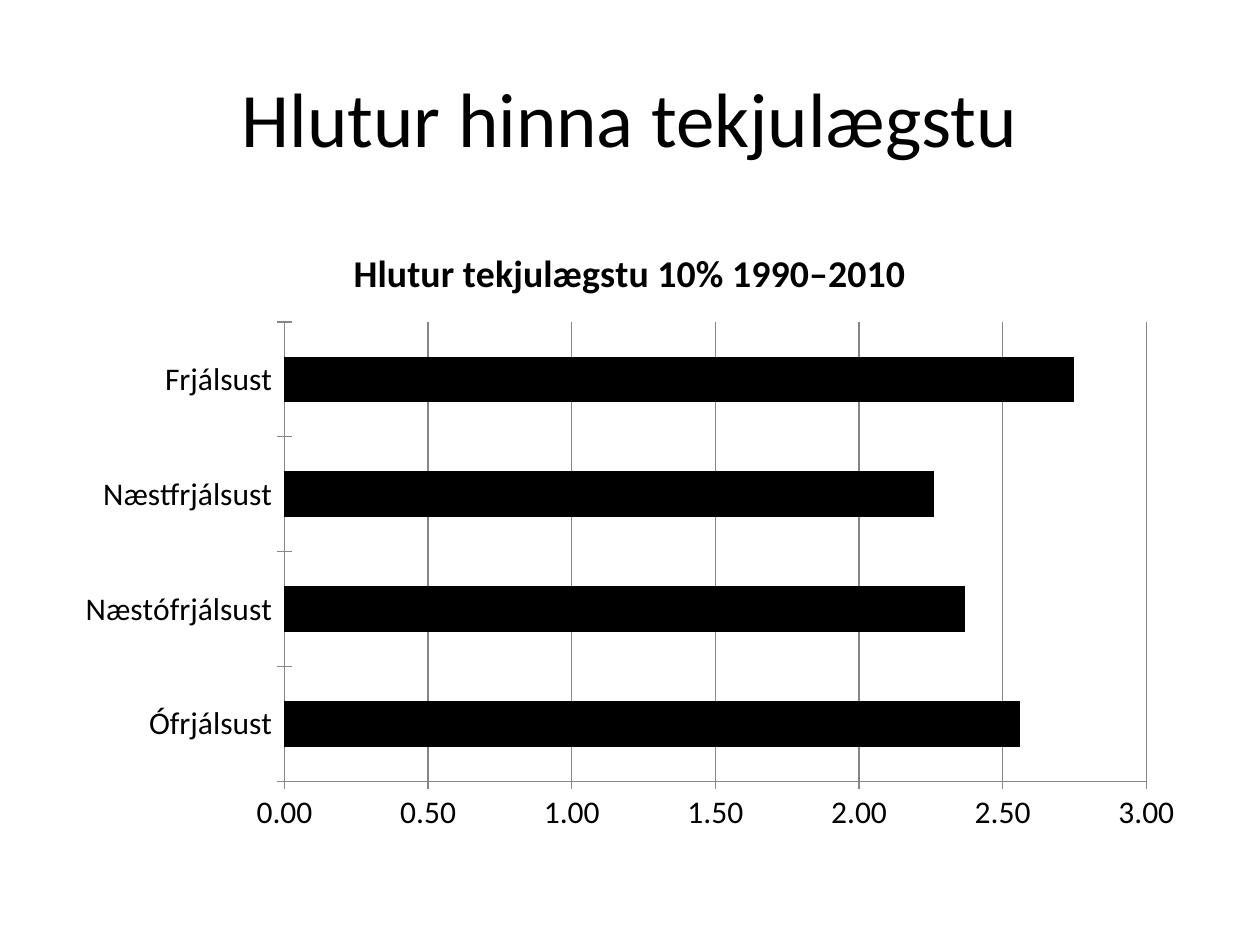
from dataclasses import dataclass

from pptx import Presentation
from pptx import util as u
from pptx.chart.data import CategoryChartData
from pptx.dml.color import RGBColor
from pptx.enum import chart as charts
from pptx.enum import text

FONT = "Calibri"
COLORS = {"background": "FFFFFF", "ink": "000000", "grid": "868686"}


@dataclass
class Group:
    name: str
    share: float


GROUPS = [
    Group("Ófrjálsust", 2.56),
    Group("Næstófrjálsust", 2.37),
    Group("Næstfrjálsust", 2.26),
    Group("Frjálsust", 2.75),
]


def color(name: str) -> RGBColor:
    return RGBColor.from_string(COLORS[name])


def style_font(font, size: float, bold: bool = False) -> None:
    font.name = FONT
    font.size = u.Pt(size)
    font.bold = bold
    font.color.rgb = color("ink")


def add_title(page, words: str) -> None:
    box = page.shapes.title
    box.left, box.top = u.Inches(0.5), u.Inches(0.3)
    box.width, box.height = u.Inches(9), u.Inches(1.25)
    box.text_frame.vertical_anchor = text.MSO_ANCHOR.MIDDLE
    para = box.text_frame.paragraphs[0]
    para.alignment = text.PP_ALIGN.CENTER
    span = para.add_run()
    span.text = words
    style_font(span.font, 44)


def style_axis(axis) -> None:
    axis.major_tick_mark = charts.XL_TICK_MARK.CROSS
    axis.minor_tick_mark = charts.XL_TICK_MARK.NONE
    style_line(axis.format.line)
    style_font(axis.tick_labels.font, 18)


def style_line(line) -> None:
    line.color.rgb = color("grid")
    line.width = u.Pt(0.75)


def add_share_chart(page, heading: str, groups: list[Group]) -> None:
    data = CategoryChartData(number_format="0.00")
    data.categories = [group.name for group in groups]
    data.add_series("Series 1", [group.share for group in groups])
    chart = page.shapes.add_chart(
        charts.XL_CHART_TYPE.BAR_CLUSTERED,
        u.Inches(0.5), u.Inches(1.75), u.Inches(9), u.Inches(4.95), data,
    ).chart
    style_font(chart.font, 18)
    chart.has_legend = False

    # Heading
    chart.has_title = True
    chart.chart_title.include_in_layout = False
    span = chart.chart_title.text_frame.paragraphs[0].add_run()
    span.text = heading
    style_font(span.font, 21.6, bold=True)

    # Bars
    plot = chart.plots[0]
    plot.vary_by_categories = False
    plot.gap_width = 150
    fill = plot.series[0].format.fill
    fill.solid()
    fill.fore_color.rgb = color("ink")

    # Axes
    style_axis(chart.category_axis)
    values = chart.value_axis
    style_axis(values)
    values.minimum_scale, values.maximum_scale, values.major_unit = 0, 3, 0.5
    values.has_major_gridlines = True
    style_line(values.major_gridlines.format.line)
    values.tick_labels.number_format = "0.00"
    values.tick_labels.number_format_is_linked = False


def main() -> None:
    deck = Presentation()
    deck.slide_width, deck.slide_height = u.Inches(10), u.Inches(7.5)
    page = deck.slides.add_slide(deck.slide_layouts[5])
    page.background.fill.solid()
    page.background.fill.fore_color.rgb = color("background")
    add_title(page, "Hlutur hinna tekjulægstu")
    add_share_chart(page, "Hlutur tekjulægstu 10% 1990–2010", GROUPS)
    deck.save("out.pptx")


if __name__ == "__main__":
    main()
